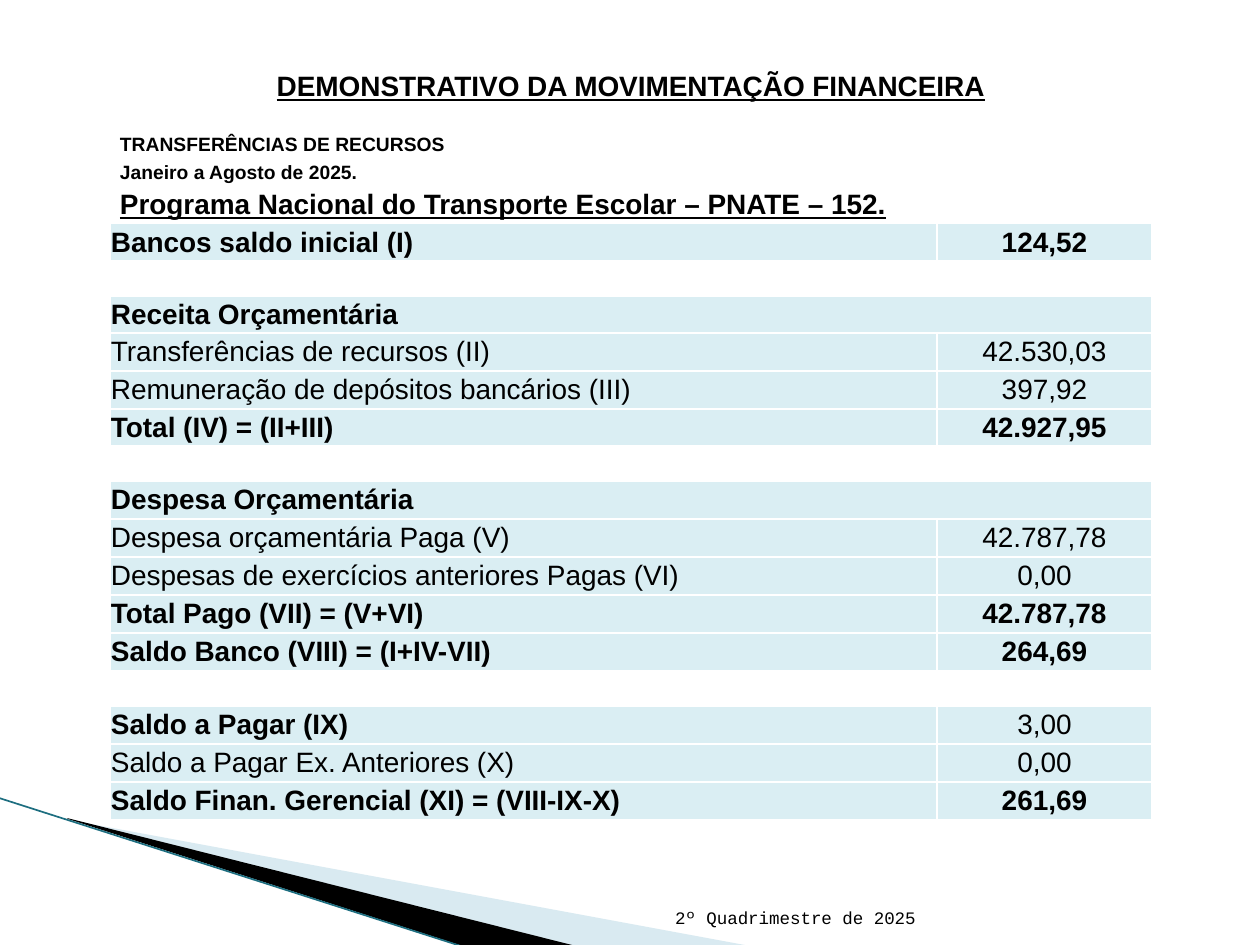
from lxml.etree import SubElement
from pptx import Presentation
from pptx.dml.color import RGBColor
from pptx.enum.shapes import MSO_CONNECTOR
from pptx.enum.text import MSO_ANCHOR, PP_ALIGN
from pptx.oxml.ns import qn
from pptx.util import Pt

PX = 914400 / 126
COLORS = {"black": "000000", "white": "FFFFFF", "row": "DAEEF3",
          "swoosh": "A0CBDC", "edge": "1D6E80"}
LEFT, CENTER, JUSTIFY = PP_ALIGN.LEFT, PP_ALIGN.CENTER, PP_ALIGN.JUSTIFY


def px(n):
    return round(n * PX)


def rgb(name):
    return RGBColor.from_string(COLORS[name])


prs = Presentation()
prs.slide_width, prs.slide_height = px(1260), px(945)
s = prs.slides.add_slide(prs.slide_layouts[6])

# Corner decoration
swooshes = [
    ("swoosh", [(69, 820), (750, 946), (575, 946), (69, 819)]),
    ("black", [(67, 818), (576, 946), (469, 948), (68, 819)]),
]
for color, points in swooshes:
    builder = s.shapes.build_freeform(*points[0], scale=PX)
    builder.add_line_segments(points[1:], close=True)
    sp = builder.convert_to_shape()
    sp.shadow.inherit = False
    sp.fill.solid()
    sp.fill.fore_color.rgb = rgb(color)
    sp.line.fill.background()
    if color == "swoosh":
        clr = sp.fill._xPr.find(".//" + qn("a:srgbClr"))
        SubElement(clr, qn("a:alpha"), val="40000")

edge = s.shapes.add_connector(MSO_CONNECTOR.STRAIGHT, px(-1), px(798), px(467), px(948))
edge.line.color.rgb = rgb("edge")
edge.line.width = Pt(0.95)
SubElement(edge._element.spPr, qn("a:effectLst"))

# Footer
footer = s.shapes.add_textbox(px(604), px(883), px(324), px(51))
tf = footer.text_frame
tf.word_wrap = True
tf.vertical_anchor = MSO_ANCHOR.BOTTOM
tf.text = "2º Quadrimestre de 2025"
p = tf.paragraphs[0]
p.alignment = PP_ALIGN.RIGHT
font = p.runs[0].font
font.name, font.size = "Courier New", Pt(10)
font.color.rgb = rgb("black")

# Heading rows: text, height, size, underline, alignment, left inset
headings = [
    ("DEMONSTRATIVO DA MOVIMENTAÇÃO FINANCEIRA", 35, 16, True, CENTER, 1),
    ("", 26, 8, False, LEFT, 1),
    ("TRANSFERÊNCIAS DE RECURSOS", 28, 11, False, LEFT, 10),
    ("Janeiro a Agosto de 2025.", 28, 11, False, LEFT, 10),
    ("Programa Nacional do Transporte Escolar – PNATE – 152.", 37, 16, True, LEFT, 10),
]
# Account rows: label, value, height, label bold, value bold
accounts = [
    ("Bancos saldo inicial (I)", "124,52", 38, True, True),
    ("", "", 35, False, False),
    ("Receita Orçamentária", None, 37, True, False),
    ("Transferências de recursos (II)", "42.530,03", 38, False, False),
    ("Remuneração de depósitos bancários (III)", "397,92", 38, False, False),
    ("Total (IV) = (II+III)", "42.927,95", 37, True, True),
    ("", "", 35, False, False),
    ("Despesa Orçamentária", None, 38, True, False),
    ("Despesa orçamentária Paga (V)", "42.787,78", 38, False, False),
    ("Despesas de exercícios anteriores Pagas (VI)", "0,00", 38, False, False),
    ("Total Pago (VII) = (V+VI)", "42.787,78", 38, True, True),
    ("Saldo Banco (VIII) = (I+IV-VII)", "264,69", 38, True, True),
    ("", "", 35, False, False),
    ("Saldo a Pagar (IX)", "3,00", 38, True, False),
    ("Saldo a Pagar Ex. Anteriores (X)", "0,00", 38, False, False),
    ("Saldo Finan. Gerencial (XI) = (VIII-IX-X)", "261,69", 38, True, True),
]

# Each row: height, fill, merged, then per cell (text, size, bold, underline, alignment, inset)
rows = []
for text, height, size, underline, align, inset in headings:
    rows.append((height, "white", True, [(text, size, True, underline, align, inset)]))
for label, value, height, label_bold, value_bold in accounts:
    merged = value is None
    cells = [(label, 16, label_bold, False, LEFT if merged else JUSTIFY, 1)]
    if not merged:
        cells.append((value, 16, value_bold, False, CENTER, 1))
    rows.append((height, "row" if label else "white", merged, cells))

total_height = sum(row[0] for row in rows)
table = s.shapes.add_table(len(rows), 2, px(110), px(69), px(1042), px(total_height)).table
table.first_row = table.horz_banding = False
table.columns[0].width, table.columns[1].width = px(827), px(215)

for i, (height, fill, merged, cells) in enumerate(rows):
    table.rows[i].height = px(height)
    if merged:
        table.cell(i, 0).merge(table.cell(i, 1))
    for cell in table.rows[i].cells:
        cell.margin_left = cell.margin_right = cell.margin_top = px(1)
        cell.margin_bottom = 0
        cell.vertical_anchor = MSO_ANCHOR.MIDDLE
        tcPr = cell._tc.get_or_add_tcPr()
        for side in ("lnL", "lnR", "lnT", "lnB"):
            ln = SubElement(tcPr, qn("a:" + side), w=str(Pt(1.5)))
            solid = SubElement(ln, qn("a:solidFill"))
            SubElement(solid, qn("a:srgbClr"), val=COLORS["white"])
        cell.fill.solid()
        cell.fill.fore_color.rgb = rgb(fill)

    for j, (text, size, bold, underline, align, inset) in enumerate(cells):
        cell = table.cell(i, j)
        cell.margin_left = px(inset)
        p = cell.text_frame.paragraphs[0]
        if not text:
            SubElement(p._p, qn("a:endParaRPr"), sz="800")
            continue
        p.text = text
        p.alignment = align
        font = p.runs[0].font
        font.name, font.size = "Arial", Pt(size)
        font.bold, font.underline = bold, underline
        font.color.rgb = rgb("black")

prs.save("out.pptx")
